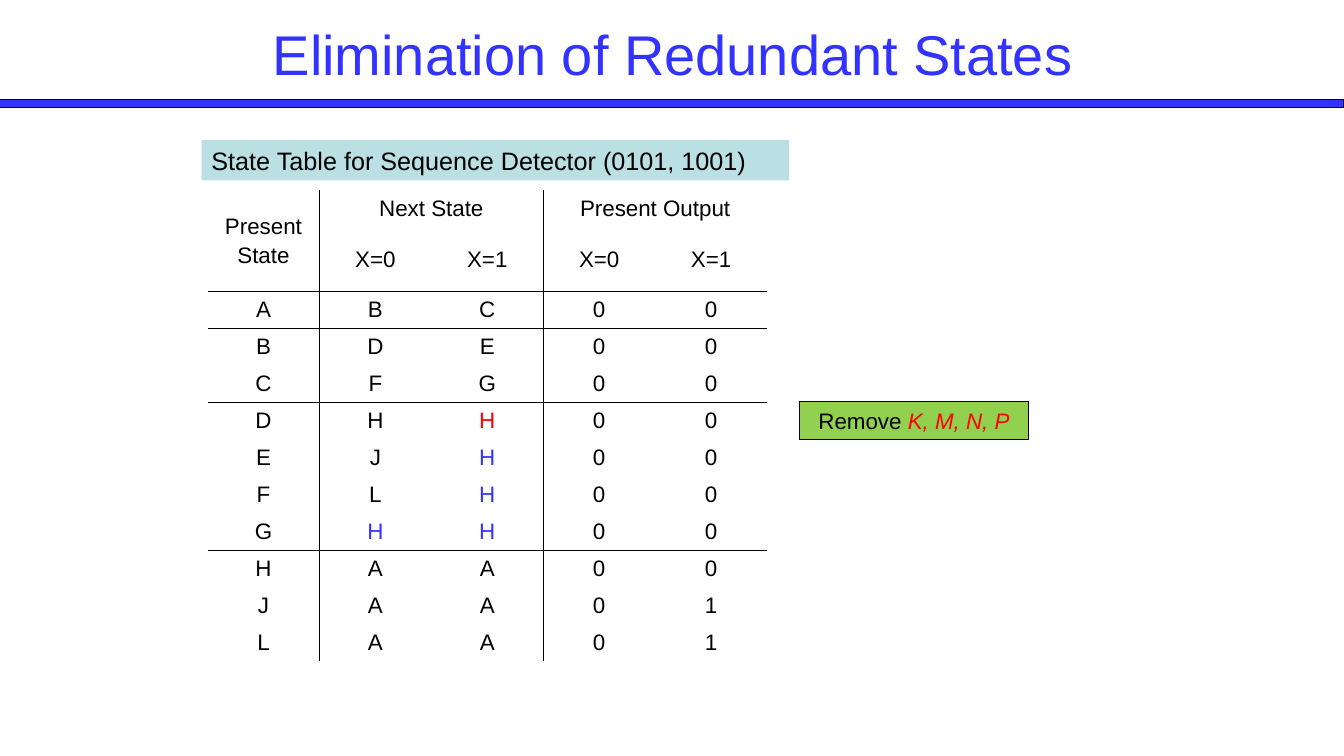
from lxml.etree import SubElement
from pptx import Presentation
from pptx.dml.color import RGBColor
from pptx.enum.shapes import MSO_SHAPE
from pptx.enum.text import MSO_ANCHOR, MSO_AUTO_SIZE, PP_ALIGN
from pptx.oxml import parse_xml
from pptx.oxml.ns import nsdecls, qn
from pptx.util import Cm, Pt

COLOURS = {
    "black": "000000",
    "blue": "3333FF",
    "red": "FF0000",
    "pale": "BBE0E3",
    "green": "92D050",
}
HEADERS = [
    ["Present\nState", "Next State", "", "Present Output", ""],
    ["", "X=0", "X=1", "X=0", "X=1"],
]
STATES = ["ABC00", "BDE00", "CFG00", "DHH00", "EJH00",
          "FLH00", "GHH00", "HAA00", "JAA01", "LAA01"]
HIGHLIGHTS = {(5, 2): "red", (6, 2): "blue", (7, 2): "blue",
              (8, 1): "blue", (8, 2): "blue"}
ROWS_RULED_BELOW = {1, 2, 4, 8}
COLUMNS_RULED_RIGHT = {0, 2}


def rgb(name):
    return RGBColor.from_string(COLOURS[name])


def format_paragraph(paragraph, size, colour="black", align=PP_ALIGN.CENTER):
    paragraph.alignment = align
    paragraph.font.name = "Arial"
    paragraph.font.size = Pt(size)
    paragraph.font.color.rgb = rgb(colour)


def add_title(slide, text):
    title = slide.shapes.title
    title.left, title.top = Cm(4.88), Cm(0.33)
    title.width, title.height = Cm(24.13), Cm(2.01)
    frame = title.text_frame
    frame.text = text
    frame.auto_size = MSO_AUTO_SIZE.NONE
    frame.vertical_anchor = MSO_ANCHOR.MIDDLE
    format_paragraph(frame.paragraphs[0], 40, "blue")


def add_box(slide, left, top, width, height, fill, outlined=True):
    box = slide.shapes.add_shape(
        MSO_SHAPE.RECTANGLE, Cm(left), Cm(top), Cm(width), Cm(height))
    box.shadow.inherit = False
    box.fill.solid()
    box.fill.fore_color.rgb = rgb(fill)
    if outlined:
        box.line.color.rgb = rgb("black")
        box.line.width = Pt(0.75)
    else:
        box.line.fill.background()
    return box.text_frame.paragraphs[0]


def set_borders(cell, ruled_sides):
    properties = cell._tc.get_or_add_tcPr()
    for index, side in enumerate("LRTB"):
        line = parse_xml(f'<a:ln{side} {nsdecls("a")} w="12700"/>')
        if side in ruled_sides:
            fill = SubElement(line, qn("a:solidFill"))
            SubElement(fill, qn("a:srgbClr"), val=COLOURS["black"])
        else:
            SubElement(line, qn("a:noFill"))
        properties.insert(index, line)


def find_ruled_sides(cell, row, column):
    last_row = row + cell.span_height - 1
    last_column = column + cell.span_width - 1
    rules = {
        "L": column - 1 in COLUMNS_RULED_RIGHT,
        "R": last_column in COLUMNS_RULED_RIGHT,
        "T": row - 1 in ROWS_RULED_BELOW,
        "B": last_row in ROWS_RULED_BELOW,
    }
    return {side for side, ruled in rules.items() if ruled}


def add_state_table(slide):
    rows = HEADERS + STATES
    table = slide.shapes.add_table(
        len(rows), 5, Cm(5.23), Cm(4.8), Cm(14.1), Cm(11.16)).table
    table.first_row = table.horz_banding = False
    for start, end in [((0, 0), (1, 0)), ((0, 1), (0, 2)), ((0, 3), (0, 4))]:
        table.cell(*start).merge(table.cell(*end))
    for row, values in enumerate(rows):
        for column, value in enumerate(values):
            cell = table.cell(row, column)
            cell.text = value
            cell.vertical_anchor = MSO_ANCHOR.MIDDLE
            cell.fill.background()
            set_borders(cell, find_ruled_sides(cell, row, column))
            for paragraph in cell.text_frame.paragraphs:
                format_paragraph(
                    paragraph, 16, HIGHLIGHTS.get((row, column), "black"))
                paragraph.space_before = Pt(3.2)


def main():
    presentation = Presentation()
    presentation.slide_width, presentation.slide_height = Cm(33.87), Cm(19.05)
    slide = presentation.slides.add_slide(presentation.slide_layouts[5])

    add_box(slide, 0, 2.51, 33.87, 0.21, "blue")
    add_state_table(slide)

    caption = add_box(slide, 5.08, 3.53, 14.81, 1.02, "pale", outlined=False)
    caption.add_run().text = "State Table for Sequence Detector (0101, 1001)"
    format_paragraph(caption, 18, align=PP_ALIGN.LEFT)

    remark = add_box(slide, 20.14, 10.13, 5.79, 0.94, "green")
    remark.add_run().text = "Remove "
    removed = remark.add_run()
    removed.text = "K, M, N, P"
    removed.font.italic = True
    removed.font.color.rgb = rgb("red")
    format_paragraph(remark, 16)

    add_title(slide, "Elimination of Redundant States")
    presentation.save("out.pptx")


if __name__ == "__main__":
    main()
